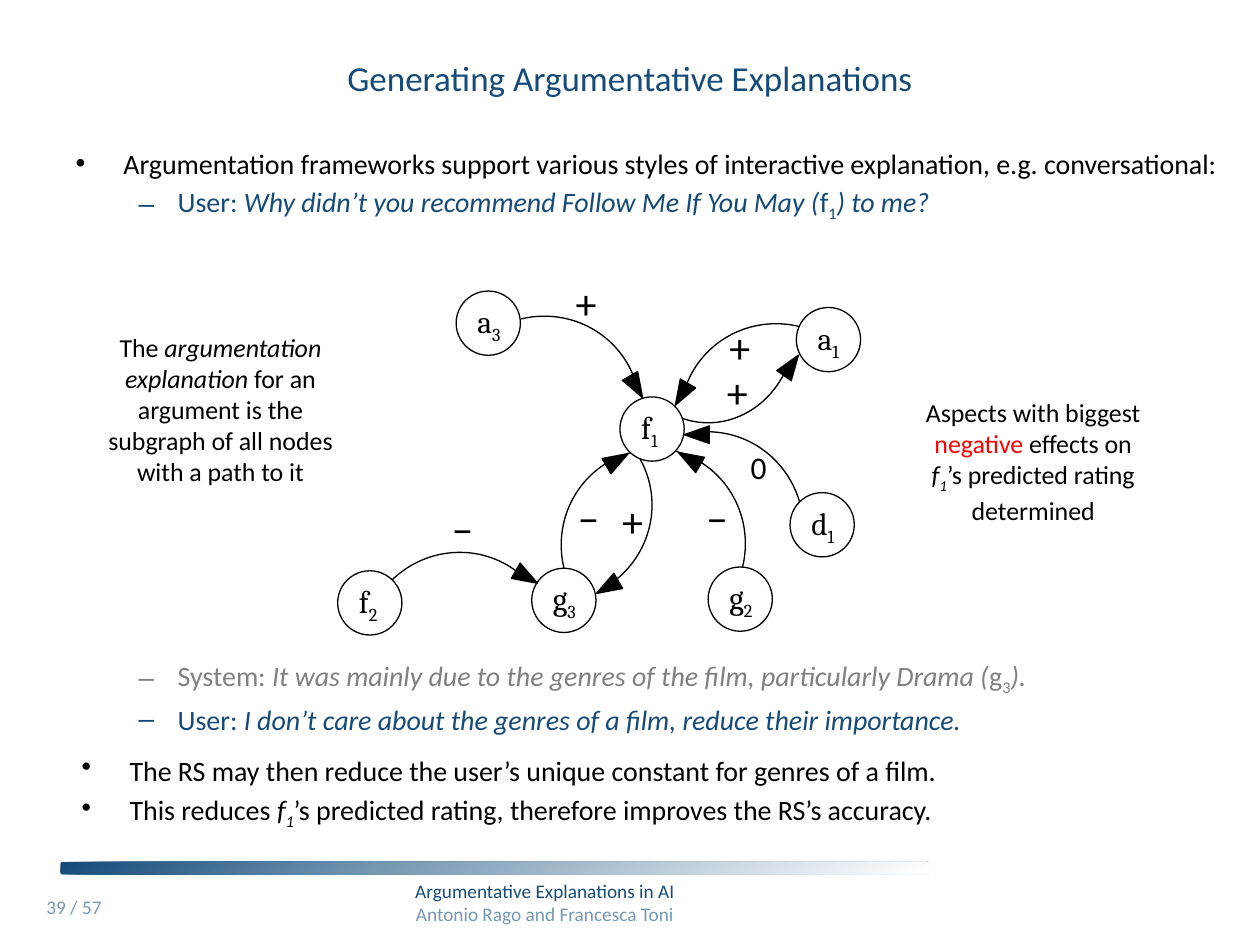
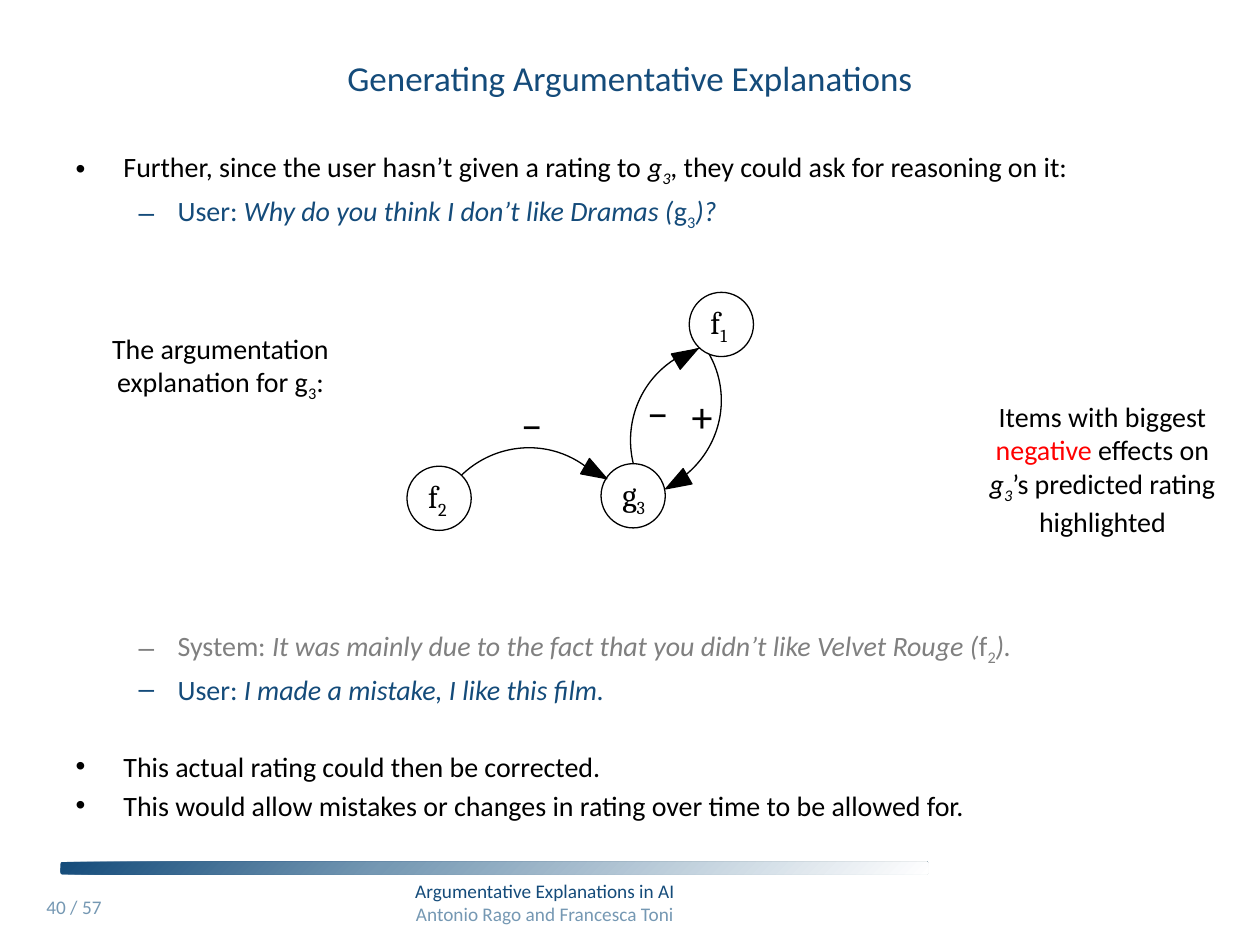
import pptx
import pptx.util
import pptx.oxml
import pptx.oxml.ns
from lxml import etree
from pptx.dml.color import RGBColor
from pptx.enum.shapes import MSO_SHAPE
from pptx.enum.text import MSO_ANCHOR, MSO_AUTO_SIZE, PP_ALIGN
from pptx.util import Inches

COLORS = {
    "navy": "144B7A",
    "steel": "7598B3",
    "gray": "808080",
    "red": "FF0000",
    "black": "000000",
    "white": "FFFFFF",
}

# Circle's left and top
NODES = {
    "f1": (4.92, 3.15),
    "f2": (2.68, 4.53),
    "g3": (4.22, 4.51),
    "d1": (6.27, 3.91),
    "a3": (3.62, 2.31),
    "a1": (6.32, 2.44),
    "g2": (5.62, 4.50),
}

WIDE = (1.53, 1.5)
SMALL = (1.3, 1.41)
# (from, to): arc place, arc size, arc turn, flipped, tip place, tip turn, sign, sign place
EDGES = {
    ("g3", "f1"): ((4.44, 3.58), WIDE, 258.2, False, (4.83, 3.55), 60, "−", (4.49, 3.86)),
    ("g2", "f1"): ((4.40, 3.57), WIDE, 101.8, True, (5.40, 3.54), 300, "−", (5.51, 3.86)),
    ("d1", "f1"): ((4.86, 3.44), WIDE, 71.8, True, (5.46, 3.35), 270, "0", (5.86, 3.51)),
    ("a1", "f1"): ((5.40, 2.57), WIDE, 11.8, True, (5.34, 3.03), 210, "+", (5.69, 2.50)),
    ("a3", "f1"): ((3.55, 2.51), WIDE, 348.2, False, (4.98, 2.97), 150, "+", (4.47, 2.15)),
    ("f1", "a1"): ((5.00, 1.95), SMALL, 197, True, (6.21, 2.80), 35.2, "+", (5.67, 2.86)),
    ("f1", "g3"): ((3.65, 3.27), WIDE, 146.8, True, (4.75, 4.56), 240, "+", (4.84, 3.88)),
    ("f2", "g3"): ((2.87, 4.39), WIDE, 318.2, False, (4.11, 4.48), 120, "−", (3.49, 3.95)),
}

# Bullet sign, level, left margin, first-line indent
BULLETS = {"dot": ("•", 0, 0.38, -0.38), "dash": ("–", 1, 0.81, -0.31)}


def rgb(name):
    return RGBColor.from_string(COLORS[name])


class Deck:
    def __init__(self):
        self.prs = pptx.Presentation()
        self.prs.slide_width, self.prs.slide_height = Inches(10), Inches(7.5)
        self.font = "Calibri"
        self.slide = None

    def start(self, number):
        """Add a slide with the shared title and footer."""
        self.slide = self.prs.slides.add_slide(self.prs.slide_layouts[1])
        title = self.slide.shapes.title
        self.place(title, 0.5, 0.3, 9, 0.63)
        title.text_frame.vertical_anchor = MSO_ANCHOR.MIDDLE
        self.text(title, [[("Generating Argumentative Explanations",)]],
                  20, "navy", align=PP_ALIGN.CENTER)
        self.band()
        self.label([[("Argumentative Explanations in AI",)],
                    [("Antonio Rago and Francesca Toni", "", "steel")]],
                   1.16, 6.93, 6.33, 0.47, 11, "navy", align=PP_ALIGN.CENTER)
        self.label([[(f"{number} / 57",)]], 0.27, 7.06, 0.67, 0.4, 11, "steel")

    def place(self, shape, *box):
        shape.left, shape.top, shape.width, shape.height = map(Inches, box)

    def shape(self, kind, box, fill=None, line=None, turn=0):
        shape = self.slide.shapes.add_shape(kind, *map(Inches, box))
        shape.shadow.inherit = False
        shape.rotation = turn
        if fill:
            shape.fill.solid()
            shape.fill.fore_color.rgb = rgb(fill)
        else:
            shape.fill.background()
        if line:
            shape.line.color.rgb = rgb(line)
            shape.line.width = pptx.util.Pt(0.75)
        else:
            shape.line.fill.background()
        return shape

    def band(self):
        bar = self.shape(MSO_SHAPE.ROUNDED_RECTANGLE, (0.48, 6.84, 6.89, 0.1))
        stops = "".join(
            f'<a:gs pos="{pos}000"><a:srgbClr val="{COLORS[name]}"/></a:gs>'
            for pos, name in ((0, "white"), (63, "steel"), (100, "navy")))
        fade = pptx.oxml.parse_xml(
            f'<a:gradFill {pptx.oxml.ns.nsdecls("a")}><a:gsLst>{stops}</a:gsLst>'
            '<a:path path="circle"><a:fillToRect l="100000" t="100000"/></a:path>'
            '</a:gradFill>')
        props = bar._element.spPr
        props.replace(props.find(pptx.oxml.ns.qn("a:noFill")), fade)

    def text(self, shape, paras, size, color="black", align=None, font=None):
        """Fill a shape; a run is (text, flags, color), flags i italic, s subscript."""
        frame = shape.text_frame
        frame.word_wrap = True
        frame.auto_size = MSO_AUTO_SIZE.NONE
        for n, runs in enumerate(paras):
            para = frame.paragraphs[0] if n == 0 else frame.add_paragraph()
            para.alignment = align
            para.space_before = pptx.util.Pt(0)
            for part in runs:
                words, flags, shade = (part + ("", ""))[:3]
                run = para.add_run()
                run.text = words
                run.font.name = font or self.font
                run.font.size = pptx.util.Pt(size)
                run.font.color.rgb = rgb(shade or color)
                run.font.italic = "i" in flags
                if "s" in flags:
                    run._r.get_or_add_rPr().set("baseline", "-25000")

    def label(self, paras, left, top, width, height, size, color="black", **style):
        box = self.slide.shapes.add_textbox(*map(Inches, (left, top, width, height)))
        self.text(box, paras, size, color, **style)

    def bullets(self, shape, items):
        """Items are (bullet kind, space before in points, color, runs)."""
        self.text(shape, [[(run + ("",))[:2] + (color,) for run in runs]
                          for _, _, color, runs in items], 16)
        for para, (kind, gap, _, _) in zip(shape.text_frame.paragraphs, items):
            sign, para.level, margin, indent = BULLETS[kind]
            para.space_before = pptx.util.Pt(gap)
            props = para._p.get_or_add_pPr()
            props.set("marL", str(Inches(margin)))
            props.set("indent", str(Inches(indent)))
            etree.SubElement(props, pptx.oxml.ns.qn("a:buChar")).set("char", sign)

    def body(self, box, items):
        holder = self.slide.placeholders[1]
        self.place(holder, *box)
        self.bullets(holder, items)

    def list(self, box, items):
        self.bullets(self.slide.shapes.add_textbox(*map(Inches, box)), items)

    def note(self, left, top, size, runs):
        self.label([runs], left, top, 2.04, 1.28, size, align=PP_ALIGN.CENTER)

    def edge(self, ends, dx, dy):
        arc_at, arc_size, turn, flip, tip_at, tip_turn, sign, sign_at = EDGES[ends]

        def shift(spot):
            return spot[0] + dx, spot[1] + dy

        arc = self.shape(MSO_SHAPE.BLOCK_ARC, shift(arc_at) + arc_size,
                         "black", "black", turn)
        for n, angle in enumerate((160.861, 213.771, 0)):
            arc.adjustments[n] = angle
        if flip:
            arc._element.spPr.xfrm.set("flipH", "1")
        self.shape(MSO_SHAPE.ISOSCELES_TRIANGLE, shift(tip_at) + (0.14, 0.2),
                   "black", "black", tip_turn)
        self.label([[(sign,)]], *shift(sign_at), 0.37, 0.5, 18 if sign == "0" else 24)

    def node(self, name, dx, dy):
        left, top = NODES[name][0] + dx, NODES[name][1] + dy
        self.shape(MSO_SHAPE.OVAL, (left, top, 0.51, 0.51), line="black")
        self.label([[(name[0],), (name[1], "s")]], left + 0.07, top + 0.04,
                   0.62, 0.4, 18, font="Cambria")

    def graph(self, names, dx=0, dy=0):
        """Draw the named nodes and every edge between them."""
        for ends in EDGES:
            if set(ends) <= set(names):
                self.edge(ends, dx, dy)
        for name in names:
            self.node(name, dx, dy)


def reduce_slide(deck):
    deck.start(39)
    deck.body((0.5, 1.11, 9.5, 5.63), [
        ("dot", 0, "black", [("Argumentation frameworks support various styles of "
                              "interactive explanation, e.g. conversational:",)]),
        ("dash", 3, "navy", [("User: ",),
                             ("Why didn’t you recommend Follow Me If You May (", "i"),
                             ("f",), ("1", "s"), (") to me?", "i")]),
        ("dash", 249, "gray", [("System: ",),
                               ("It was mainly due to the genres of the film, "
                                "particularly Drama (", "i"),
                               ("g",), ("3", "s"), (").", "i")]),
        ("dash", 3, "navy", [("User: ",),
                             ("I don’t care about the genres of a film, "
                              "reduce their importance.", "i")]),
    ])
    deck.list((0.55, 5.93, 9, 0.8), [
        ("dot", 0, "black", [("The RS may then reduce the user’s unique constant "
                              "for genres of a film.",)]),
        ("dot", 3, "black", [("This reduces ",), ("f", "i"), ("1", "is"),
                             ("’s predicted rating, therefore improves "
                              "the RS’s accuracy.",)]),
    ])
    deck.graph(NODES)
    deck.note(0.73, 2.58, 14.8, [
        ("The ",), ("argumentation explanation ", "i"),
        ("for an argument is the subgraph of all nodes with a path to it",)])
    deck.note(7.18, 3.1, 14.8, [
        ("Aspects with biggest ",), ("negative", "", "red"), (" effects on ",),
        ("f", "i"), ("1", "is"), ("’s predicted rating determined",)])


def reason_slide(deck):
    deck.start(40)
    deck.body((0.5, 1.14, 9, 5.63), [
        ("dot", 0, "black", [("Further, since the user hasn’t given a rating to ",),
                             ("g", "i"), ("3", "is"),
                             (", they could ask for reasoning on it:",)]),
        ("dash", 3, "navy", [("User: ",), ("Why do you think I don’t like Dramas (", "i"),
                             ("g",), ("3", "s"), (")?", "i")]),
        ("dash", 227, "gray", [("System: ",),
                               ("It was mainly due to the fact that you didn’t "
                                "like Velvet Rouge (", "i"),
                               ("f",), ("2", "s"), (").", "i")]),
        ("dash", 3, "navy", [("User: ",), ("I made a mistake, I like this film.", "i")]),
        ("dot", 25, "black", [("This actual rating could then be corrected.",)]),
        ("dot", 3, "black", [("This would allow mistakes or changes in rating "
                              "over time to be allowed for.",)]),
    ])
    deck.graph(["f1", "f2", "g3"], 0.55, -0.83)
    deck.note(0.73, 2.58, 16, [
        ("The argumentation explanation for g",), ("3", "s"), (":",)])
    deck.note(7.73, 3.12, 16, [
        ("Items with biggest ",), ("negative", "", "red"), (" effects on ",),
        ("g", "i"), ("3", "is"), ("’s predicted rating highlighted",)])


def main():
    deck = Deck()
    reduce_slide(deck)
    reason_slide(deck)
    deck.prs.save("out.pptx")


if __name__ == "__main__":
    main()
